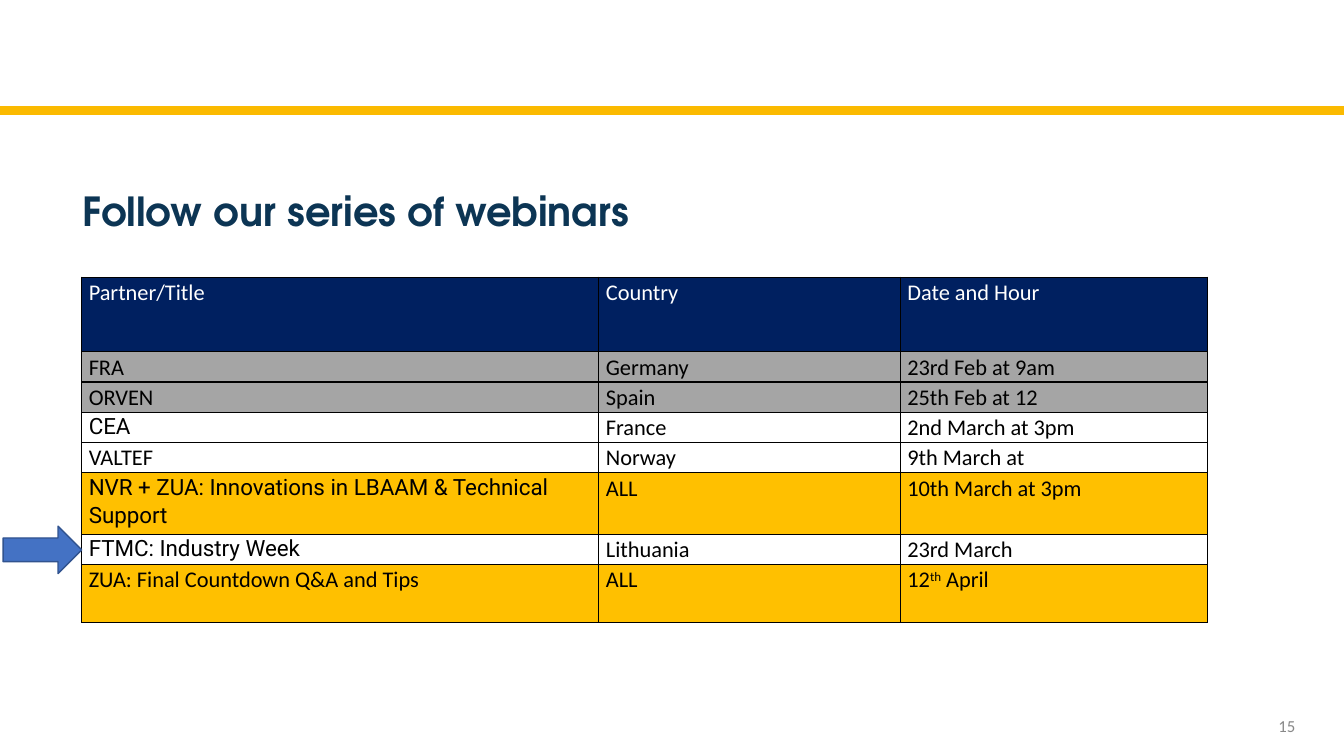
from typing import NamedTuple

from lxml import etree
from pptx import Presentation
from pptx.dml.color import RGBColor
from pptx.enum.shapes import MSO_CONNECTOR, MSO_SHAPE
from pptx.enum.text import MSO_ANCHOR, PP_ALIGN
from pptx.oxml.ns import qn
from pptx.util import Inches, Pt

STRAIGHT = MSO_CONNECTOR.STRAIGHT
RIGHT_ARROW = MSO_SHAPE.RIGHT_ARROW
TOP, MIDDLE = MSO_ANCHOR.TOP, MSO_ANCHOR.MIDDLE
LEFT, CENTER, RIGHT = PP_ALIGN.LEFT, PP_ALIGN.CENTER, PP_ALIGN.RIGHT

WIDTH, HEIGHT = Inches(13.33), Inches(7.5)
BODY, ROBOTO, HEADING = "Calibri", "Roboto", "TeX Gyre Adventor"
COLORS = {
    "rule": "FBBA00", "number": "888888", "title": "0C3554", "header": "002060",
    "past": "A5A5A5", "joint": "FFC000", "white": "FFFFFF", "black": "000000",
    "arrow": "4472C4", "arrow_edge": "31538F",
}
COLUMN_SHARES = (38.48, 22.43, 22.88)


class Webinar(NamedTuple):
    """One table row; its height is a percentage of the slide height."""
    partner: str
    country: str
    date: str
    height: float = 4
    fill: str = ""
    font: str = BODY
    color: str = "black"


WEBINARS = (
    Webinar("Partner/Title", "Country", "Date and Hour", 9.87, "header", color="white"),
    Webinar("FRA", "Germany", "23rd Feb at 9am", fill="past"),
    Webinar("ORVEN", "Spain", "25th Feb at 12", fill="past"),
    Webinar("CEA", "France", "2nd March at 3pm", font=ROBOTO),
    Webinar("VALTEF", "Norway", "9th March at"),
    Webinar("NVR + ZUA: Innovations in LBAAM & Technical Support", "ALL",
            "10th March at 3pm", 8.13, "joint", ROBOTO),
    Webinar("FTMC: Industry Week", "Lithuania", "23rd March", font=ROBOTO),
    Webinar("ZUA: Final Countdown Q&A and Tips", "ALL", "12^th^ April", 7.73, "joint"),
)


def rgb(name: str) -> RGBColor:
    """Look up a named colour."""
    return RGBColor.from_string(COLORS[name])


def across(share: float) -> int:
    """Convert a percentage of the slide width to a length."""
    return round(WIDTH * share / 100)


def down(share: float) -> int:
    """Convert a percentage of the slide height to a length."""
    return round(HEIGHT * share / 100)


def box(x: float, y: float, w: float, h: float) -> tuple[int, int, int, int]:
    """Convert percentages of the slide to a left, top, width and height."""
    return across(x), down(y), across(w), down(h)


def write(tf, text: str, *, size: float = 16, font: str = BODY, color: str = "black",
          bold: bool = False, align=LEFT, spacing: float = 1.0) -> None:
    """Write one paragraph, raising the parts enclosed in carets."""
    p = tf.paragraphs[0]
    p.alignment, p.line_spacing = align, spacing
    for i, part in enumerate(text.split("^")):
        r = p.add_run()
        r.text = part
        r.font.size, r.font.name, r.font.bold = Pt(size), font, bold
        r.font.color.rgb = rgb(color)
        if i % 2:
            r._r.get_or_add_rPr().set("baseline", "30000")


def add_label(s, place: tuple[int, int, int, int], text: str, *, inset: float,
              anchor=TOP, **style) -> None:
    """Add a wrapping text box."""
    tf = s.shapes.add_textbox(*place).text_frame
    tf.word_wrap, tf.vertical_anchor = True, anchor
    tf.margin_left = tf.margin_right = Inches(inset)
    tf.margin_top = tf.margin_bottom = Inches(min(inset, 0.05))
    write(tf, text, **style)


def add_borders(cell) -> None:
    """Outline a cell with thin black lines."""
    tc_pr = cell._tc.get_or_add_tcPr()
    for side in ("lnL", "lnR", "lnT", "lnB"):
        ln = etree.SubElement(tc_pr, qn(f"a:{side}"), w=str(Pt(1)))
        fill = etree.SubElement(ln, qn("a:solidFill"))
        etree.SubElement(fill, qn("a:srgbClr"), val=COLORS["black"])


def add_schedule(s) -> None:
    """Add the table of webinars."""
    place = box(6.08, 36.67, sum(COLUMN_SHARES), sum(w.height for w in WEBINARS))
    table = s.shapes.add_table(len(WEBINARS), len(COLUMN_SHARES), *place).table
    table.first_row = table.horz_banding = False
    for column, share in zip(table.columns, COLUMN_SHARES):
        column.width = across(share)
    for row, webinar in zip(table.rows, WEBINARS):
        row.height = down(webinar.height)
        fonts = (webinar.font, BODY, BODY)
        for cell, text, font in zip(row.cells, webinar[:3], fonts):
            cell.margin_left = cell.margin_right = Inches(0.07)
            cell.margin_top = cell.margin_bottom = 0
            add_borders(cell)
            if webinar.fill:
                cell.fill.solid()
                cell.fill.fore_color.rgb = rgb(webinar.fill)
            else:
                cell.fill.background()
            write(cell.text_frame, text, font=font, color=webinar.color, spacing=1.07)


def add_rule(s) -> None:
    """Add the yellow line across the top."""
    y = down(14.67)
    line = s.shapes.add_connector(STRAIGHT, 0, y, WIDTH, y)
    line.line.color.rgb, line.line.width = rgb("rule"), Pt(6.5)
    etree.SubElement(line._element.spPr, qn("a:effectLst"))


def add_arrow(s) -> None:
    """Add the arrow that marks the next webinar."""
    sp = s.shapes.add_shape(RIGHT_ARROW, *box(0.23, 69.6, 5.85, 6.27))
    sp.shadow.inherit = False
    sp.fill.solid()
    sp.fill.fore_color.rgb = rgb("arrow")
    sp.line.color.rgb, sp.line.width = rgb("arrow_edge"), Pt(1)


def main() -> None:
    """Build and save the slide."""
    prs = Presentation()
    prs.slide_width, prs.slide_height = WIDTH, HEIGHT
    s = prs.slides.add_slide(prs.slide_layouts[6])
    add_rule(s)
    add_label(s, box(74.63, 93.33, 22.5, 5.33), "15", inset=0.1, anchor=MIDDLE,
              size=12, color="number", align=RIGHT)
    add_label(s, box(1.13, 24.13, 50.63, 25.07), "Follow our series of webinars",
              inset=0.04, size=28.6, font=HEADING, color="title", bold=True, align=CENTER)
    add_schedule(s)
    add_arrow(s)
    prs.save("out.pptx")


if __name__ == "__main__":
    main()
